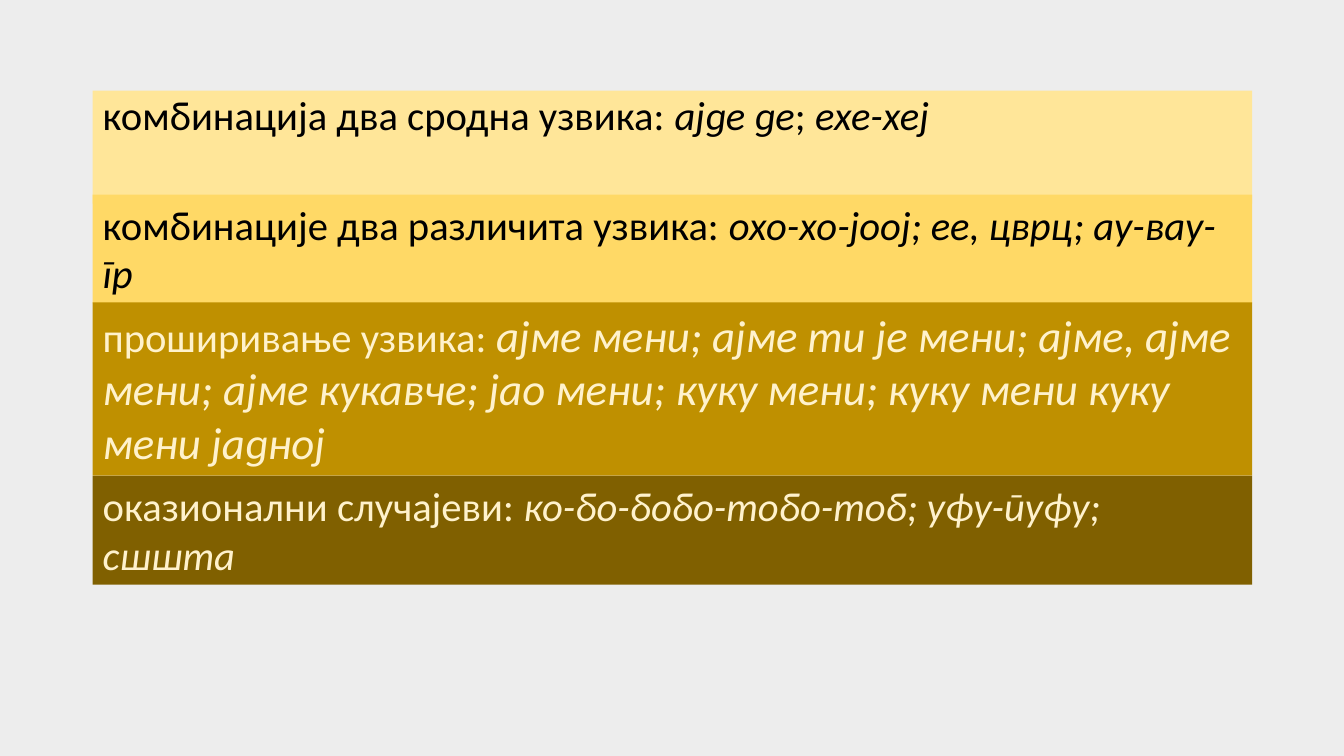
from pptx import Presentation
from pptx.dml.color import RGBColor
from pptx.enum import shapes, text
from pptx.util import Inches, Pt

LEFT, WIDTH = 0.92, 11.5
BANDS = [
    (0.9, 1.12, "FFE699", "000000", 29,
     ["комбинација два сродна узвика: ", "ајде де", "; ", "ехе-хеј"]),
    (1.93, 1.08, "FFD966", "000000", 29,
     ["комбинације два различита узвика: ",
      "охо-хо-јоој; ее, цврц; ау-вау-гр"]),
    (3, 1.72, "BF9000", "FFF2CC", 32,
     ["проширивање узвика: ",
      "ајме мени; ајме ти је мени; ајме, ајме мени; ајме кукавче; "
      "јао мени; куку мени; куку мени куку мени јадној"]),
    (4.72, 1.08, "806000", "FFF2CC", 29,
     ["оказионални случајеви: ", "ко-бо-бобо-тобо-тоб; уфу-пуфу; сшшта"]),
]


def paint(fill, color):
    """Fill solidly with a hex colour."""
    fill.solid()
    fill.fore_color.rgb = RGBColor.from_string(color)


def write(para, parts, size, color):
    """Write parts that alternate between plain and italic."""
    for i, part in enumerate(parts):
        run = para.add_run()
        run.text = part
        font = run.font
        font.name = "Calibri"
        font.italic = i % 2 == 1
        font.size = Pt(size if font.italic else 29)
        paint(font.fill, color)
        run._r.get_or_add_rPr().set("lang", "sr-Cyrl-RS")


def band(slide, top, height, back, color, size, parts):
    """Add a full-width band of text and return its paragraph."""
    box = slide.shapes.add_shape(
        shapes.MSO_SHAPE.RECTANGLE, Inches(LEFT), Inches(top),
        Inches(WIDTH), Inches(height))
    box.shadow.inherit = False
    paint(box.fill, back)
    box.line.fill.background()
    frame = box.text_frame
    frame.word_wrap = True
    frame.vertical_anchor = text.MSO_ANCHOR.TOP
    para = frame.paragraphs[0]
    para.alignment = text.PP_ALIGN.LEFT
    write(para, parts, size, color)
    return para


def main():
    """Build the slide and save it."""
    deck = Presentation()
    deck.slide_width, deck.slide_height = Inches(13.33), Inches(7.5)
    slide = deck.slides.add_slide(deck.slide_layouts[6])
    paint(slide.background.fill, "EDEDED")
    paras = [band(slide, *row) for row in BANDS]
    paras[0].line_spacing = 0.9
    paras[0].space_before = Pt(10)
    deck.save("out.pptx")


if __name__ == "__main__":
    main()
